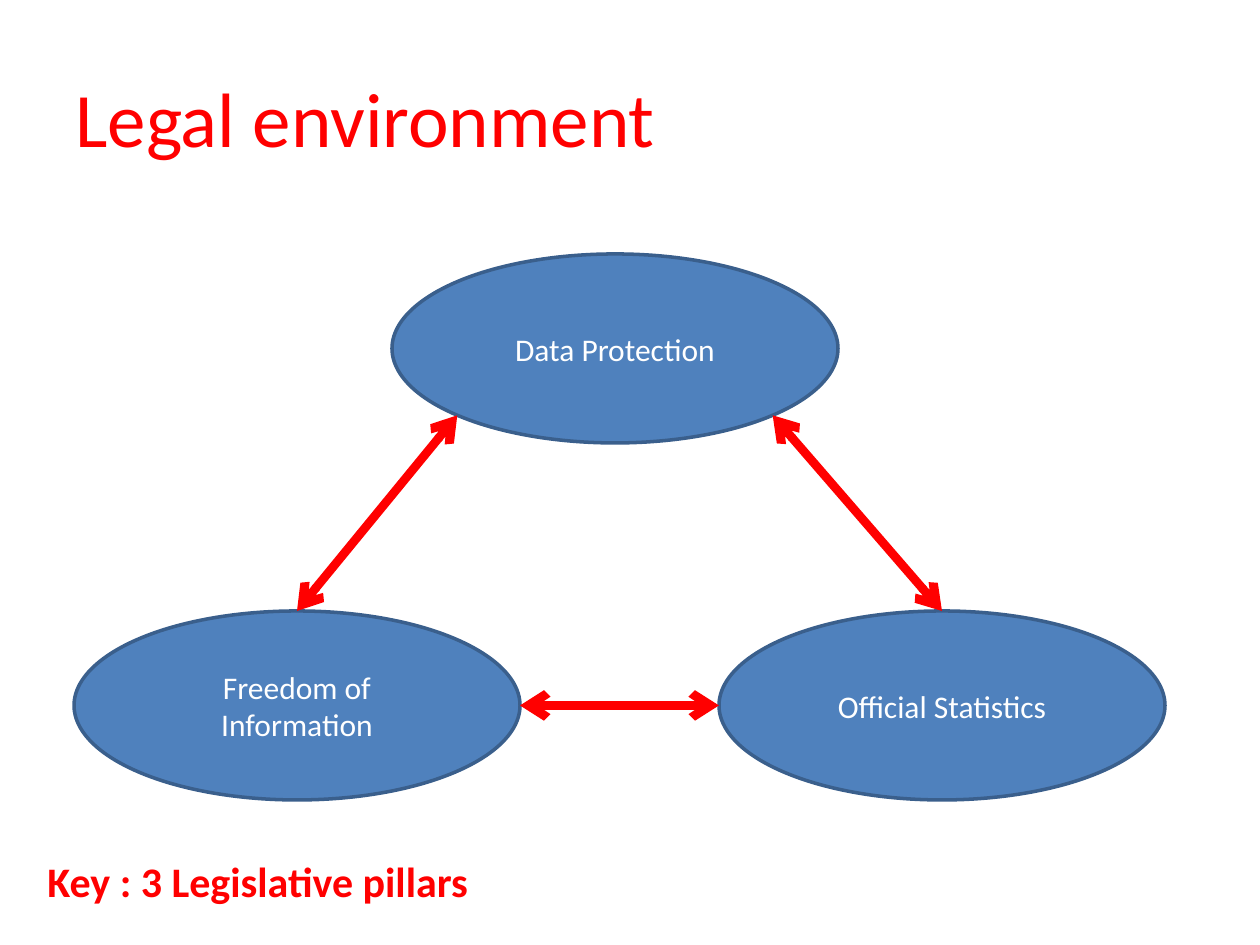
from math import sqrt

from lxml import etree
from pptx import Presentation
from pptx.dml.color import RGBColor
from pptx.enum.shapes import MSO_CONNECTOR, MSO_SHAPE
from pptx.enum.text import MSO_ANCHOR, MSO_AUTO_SIZE, PP_ALIGN
from pptx.oxml.ns import qn
from pptx.util import Emu, Pt

STRAIGHT = MSO_CONNECTOR.STRAIGHT
OVAL = MSO_SHAPE.OVAL
MIDDLE = MSO_ANCHOR.MIDDLE
GROW = MSO_AUTO_SIZE.SHAPE_TO_FIT_TEXT
LEFT, CENTER, JUSTIFY = PP_ALIGN.LEFT, PP_ALIGN.CENTER, PP_ALIGN.JUSTIFY

RED, BLUE, DARK_BLUE, WHITE = "FF0000", "4F81BD", "3A5F8C", "FFFFFF"
FONT = "Calibri"
TITLE = "Legal environment"
KEY = "Key : 3 Legislative pillars"
PILLAR_SIZE = (446, 189)
PILLARS = {
    "Data Protection": (392, 254),
    "Official Statistics": (719, 611),
    "Freedom of Information": (74, 611),
}
DIAGONAL = 1 / sqrt(2)
SIDES = {
    "top": (0, -1),
    "left": (-1, 0),
    "right": (1, 0),
    "lower left": (-DIAGONAL, DIAGONAL),
    "lower right": (DIAGONAL, DIAGONAL),
}
ARROWS = [
    ("Data Protection", "lower left", "Freedom of Information", "top"),
    ("Data Protection", "lower right", "Official Statistics", "top"),
    ("Freedom of Information", "right", "Official Statistics", "left"),
]


def px(*lengths):
    return [Emu(round(length * 914400 / 126)) for length in lengths]


def color(value):
    return RGBColor.from_string(value)


def write(frame, text, size, ink=RED, bold=False, align=LEFT):
    frame.word_wrap = True
    para = frame.paragraphs[0]
    para.alignment = align
    span = para.add_run()
    span.text = text
    span.font.name = FONT
    span.font.size = Pt(size)
    span.font.bold = bold
    span.font.color.rgb = color(ink)


def add_pillar(page, text, corner):
    pillar = page.shapes.add_shape(OVAL, *px(*corner, *PILLAR_SIZE))
    pillar.shadow.inherit = False
    pillar.fill.solid()
    pillar.fill.fore_color.rgb = color(BLUE)
    pillar.line.color.rgb = color(DARK_BLUE)
    pillar.line.width = Pt(2)
    pillar.text_frame.vertical_anchor = MIDDLE
    write(pillar.text_frame, text, 18, ink=WHITE, align=CENTER)


def edge_point(name, side):
    return [
        start + length / 2 * (1 + shift)
        for start, length, shift in zip(PILLARS[name], PILLAR_SIZE, SIDES[side])
    ]


def add_arrow(page, start, end):
    arrow = page.shapes.add_connector(STRAIGHT, *px(*start, *end))
    arrow.line.color.rgb = color(RED)
    arrow.line.width = Pt(5)
    outline = arrow.line._get_or_add_ln()
    for tip in ("a:headEnd", "a:tailEnd"):
        etree.SubElement(outline, qn(tip), type="arrow")
    etree.SubElement(arrow._element.spPr, qn("a:effectLst"))


def main():
    deck = Presentation()
    deck.slide_width, deck.slide_height = px(1260, 945)
    page = deck.slides.add_slide(deck.slide_layouts[5])

    title = page.shapes.title
    title.left, title.top, title.width, title.height = px(63, 38, 1134, 158)
    title.text_frame.vertical_anchor = MIDDLE
    write(title.text_frame, TITLE, 44, align=JUSTIFY)

    for text, corner in PILLARS.items():
        add_pillar(page, text, corner)
    for first, first_side, second, second_side in ARROWS:
        add_arrow(page, edge_point(first, first_side), edge_point(second, second_side))

    key_box = page.shapes.add_textbox(*px(35, 849, 912, 63))
    key_box.text_frame.auto_size = GROW
    write(key_box.text_frame, KEY, 24, bold=True)

    deck.save("out.pptx")


if __name__ == "__main__":
    main()
